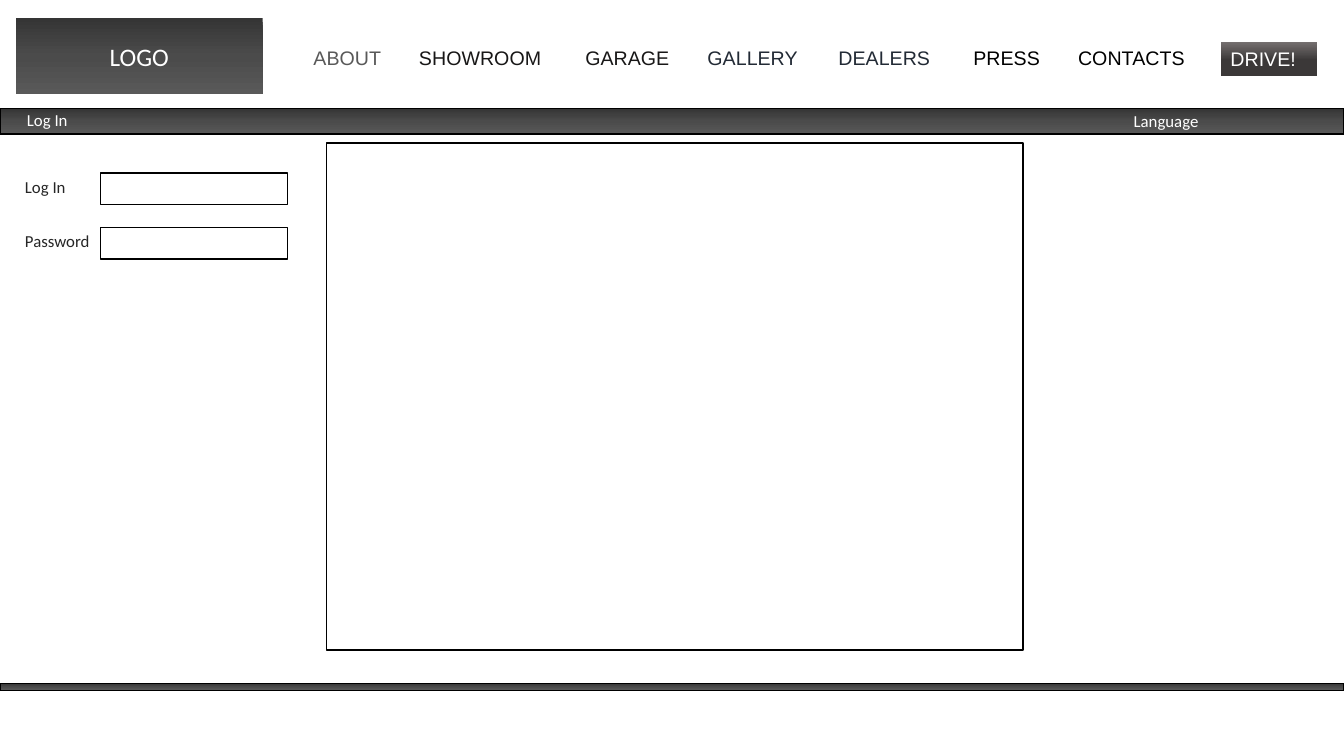
import copy

import pptx
import pptx.dml.color
import pptx.enum.shapes
import pptx.enum.text
import pptx.oxml
import pptx.util

Cm = pptx.util.Cm
Pt = pptx.util.Pt
ALIGN = pptx.enum.text.PP_ALIGN
ANCHOR = pptx.enum.text.MSO_ANCHOR
SIZING = pptx.enum.text.MSO_AUTO_SIZE

COLORS = {
    "black": "000000", "white": "FFFFFF", "gray": "595959",
    "ink": "181717", "navy": "222A35", "label": "262626",
    "dark": "353535", "mid": "4B4B4B", "light": "767171", "coal": "3B3838",
}
BAR = [(0, "dark"), (0.5, "mid"), (1, "gray")]
BUTTON = [(0, "light"), (0.54, "coal"), (1, "coal")]

# Text formats
NAV = {"name": "Arial", "size": Pt(14)}
SMALL = {"name": "Calibri", "size": Pt(12)}
LARGE = {"name": "Calibri", "size": Pt(18)}
FIT = {"word_wrap": False, "auto_size": SIZING.SHAPE_TO_FIT_TEXT,
       "vertical_anchor": ANCHOR.TOP}
MIDDLE = {"word_wrap": True, "vertical_anchor": ANCHOR.MIDDLE}

# Menu: label, left, width, color
MENU = [
    ("ABOUT", 7.65, 2.46, "gray"),
    ("SHOWROOM", 10.31, 3.99, "ink"),
    ("GARAGE", 14.5, 2.87, "ink"),
    ("GALLERY", 17.58, 3.1, "navy"),
    ("DEALERS", 20.88, 3.23, "navy"),
    ("PRESS", 24.28, 2.46, "black"),
    ("CONTACTS", 26.92, 3.56, "black"),
]


def rgb(name):
    return pptx.dml.color.RGBColor.from_string(COLORS[name])


def apply(item, values):
    for key, value in values.items():
        setattr(item, key, value)


def shade(shape, stops):
    """Fill a shape from top to bottom with three color stops."""
    fill = shape.fill
    fill.gradient()
    fill.gradient_angle = 270
    group = shape.element.spPr.find(".//" + pptx.oxml.ns.qn("a:gsLst"))
    group.append(copy.deepcopy(group[0]))
    for stop, (place, name) in zip(fill.gradient_stops, stops):
        stop.position = place
        stop.color.rgb = rgb(name)


def add_box(slide, area, fill=None, line=None):
    kind = pptx.enum.shapes.MSO_SHAPE.RECTANGLE
    shape = slide.shapes.add_shape(kind, *map(Cm, area))
    shape.shadow.inherit = False
    if isinstance(fill, list):
        shade(shape, fill)
    elif fill:
        shape.fill.solid()
        shape.fill.fore_color.rgb = rgb(fill)
    else:
        shape.fill.background()
    if line:
        shape.line.color.rgb = rgb(line)
        shape.line.width = Pt(1)
    else:
        shape.line.fill.background()
    return shape


def write(shape, text, font, color, frame=FIT, align=ALIGN.LEFT):
    apply(shape.text_frame, frame)
    para = shape.text_frame.paragraphs[0]
    para.alignment = align
    run = para.add_run()
    run.text = text
    apply(run.font, font)
    run.font.color.rgb = rgb(color)


def add_text(slide, area, text, font, color):
    write(slide.shapes.add_textbox(*map(Cm, area)), text, font, color)


def main():
    deck = pptx.Presentation()
    apply(deck, {"slide_width": Cm(33.87), "slide_height": Cm(19.05)})
    slide = deck.slides.add_slide(deck.slide_layouts[6])

    # Content frame and footer bar
    add_box(slide, (8.23, 3.6, 17.55, 12.78), line="black")
    add_box(slide, (0, 17.22, 33.87, 0.18), BAR, "black")

    # Header: logo space, menu and button
    logo = add_box(slide, (0.4, 0.46, 6.22, 1.91), BAR)
    write(logo, "LOGO", LARGE, "white", MIDDLE, ALIGN.CENTER)
    for text, left, width, color in MENU:
        add_text(slide, (left, 1.03, width, 0.86), text, NAV, color)
    drive = add_box(slide, (30.76, 1.05, 2.44, 0.86), BUTTON)
    write(drive, "DRIVE!", NAV, "white")

    # Tool bar
    add_box(slide, (0, 2.74, 33.87, 0.64), BAR, "black")
    add_text(slide, (0.43, 2.64, 1.55, 0.76), "Log In", SMALL, "white")
    add_text(slide, (28.32, 2.67, 2.16, 0.76), "Language", SMALL, "white")

    # Login form
    for row, (text, width) in enumerate([("Log In", 1.55), ("Password", 2.16)]):
        top = 4.36 + row * 1.37
        add_box(slide, (2.54, top, 4.7, 0.8), "white", "black")
        add_text(slide, (0.38, top - 0.03, width, 0.76), text, SMALL, "label")

    deck.save("out.pptx")


if __name__ == "__main__":
    main()
